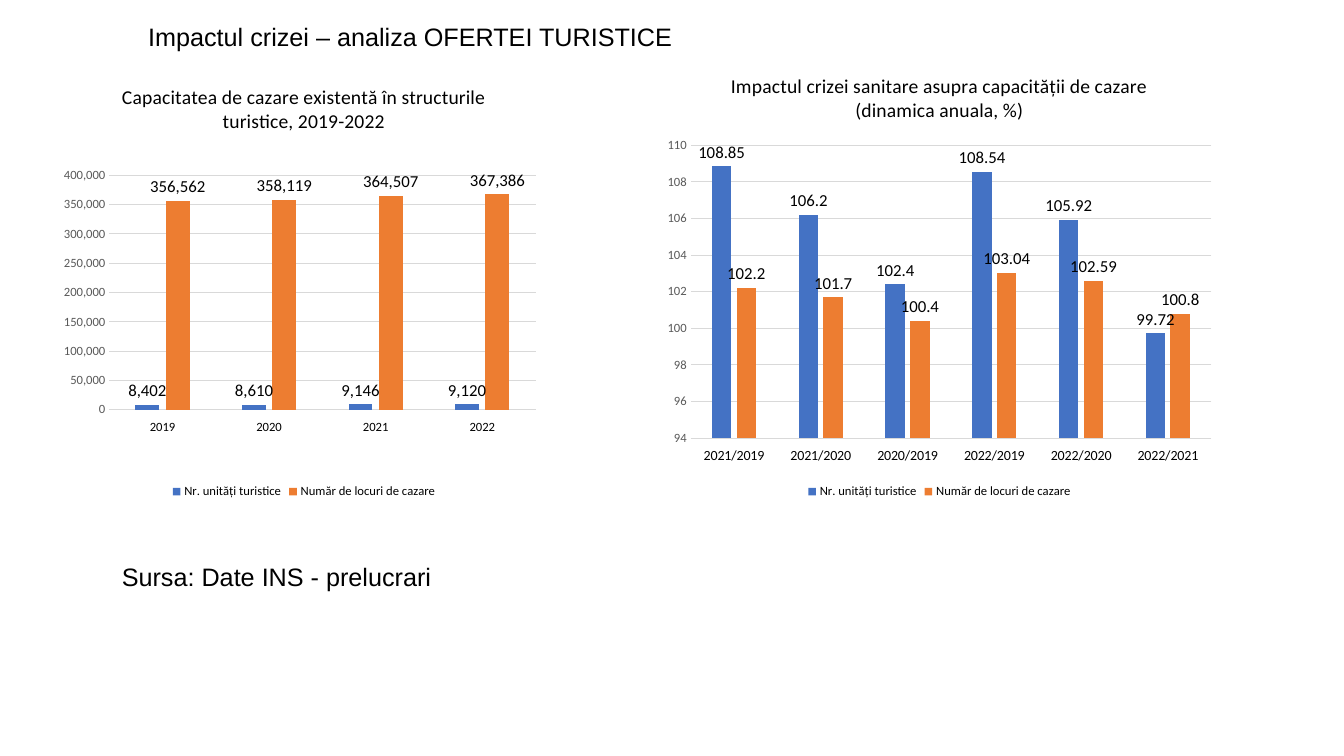
import pptx
import pptx.chart.data
import pptx.dml.color
import pptx.enum.chart
import pptx.enum.text
import pptx.oxml
import pptx.oxml.ns
import pptx.util

Pt = pptx.util.Pt

# Content
TITLE = "Impactul crizei – analiza OFERTEI TURISTICE"
SOURCE = "Sursa: Date INS - prelucrari"
SERIES = [("Nr. unități turistice", "units"), ("Număr de locuri de cazare", "places")]
CHARTS = [
    {
        "title": "Capacitatea de cazare existentă în structurile turistice, 2019-2022",
        "place": (42.5, 46.8, 349.2, 312.5),
        "categories": ["2019", "2020", "2021", "2022"],
        "units": [8402, 8610, 9146, 9120],
        "places": [356562, 358119, 364507, 367386],
        "format": "#,##0",
        "scale": (0, 400000, 50000),
        "category_size": 9,
        "plot": {"x": 0.102, "y": 0.251, "w": 0.872, "h": 0.536},
    },
    {
        "title": "Impactul crizei sanitare asupra capacității de cazare (dinamica anuala, %)",
        "place": (468.7, 38.9, 404.6, 320.4),
        "categories": ["2021/2019", "2021/2020", "2020/2019",
                       "2022/2019", "2022/2020", "2022/2021"],
        "units": [108.85, 106.2, 102.4, 108.54, 105.92, 99.72],
        "places": [102.2, 101.7, 100.4, 103.04, 102.59, 100.8],
        "format": "General",
        "scale": (94, 110, 2),
        "category_size": 10,
        "plot": None,
    },
]
COLORS = {"text": "000000", "axis": "595959", "grid": "D9D9D9",
          "units": "4472C4", "places": "ED7D31"}


def color(name):
    return pptx.dml.color.RGBColor.from_string(COLORS[name])


def style_font(font, size, name="Calibri", tint="text"):
    font.size = Pt(size)
    font.name = name
    font.bold = False
    font.color.rgb = color(tint)


def style_line(line):
    line.color.rgb = color("grid")
    line.width = Pt(0.75)


def write_text(box, text, place, anchor):
    box.left, box.top, box.width, box.height = map(Pt, place)
    frame = box.text_frame
    frame.word_wrap = True
    frame.vertical_anchor = anchor
    frame.margin_left = frame.margin_right = Pt(7.2)
    frame.margin_top = frame.margin_bottom = Pt(3.6)
    para = frame.paragraphs[0]
    para.alignment = pptx.enum.text.PP_ALIGN.LEFT
    para.line_spacing = 1.0
    span = para.add_run()
    span.text = text
    style_font(span.font, 18, "Arial")


def place_plot(chart, plot):
    """Fix the inner plot area as fractions of the chart."""
    area = chart._chartSpace.chart.plotArea
    for old in area.findall(pptx.oxml.ns.qn("c:layout")):
        area.remove(old)
    sizes = "".join(f'<c:{key} val="{value}"/>' for key, value in plot.items())
    area.insert(0, pptx.oxml.parse_xml(
        f'<c:layout {pptx.oxml.ns.nsdecls("c")}><c:manualLayout>'
        '<c:layoutTarget val="inner"/><c:xMode val="edge"/><c:yMode val="edge"/>'
        f'{sizes}</c:manualLayout></c:layout>'))


def add_column_chart(page, content):
    kinds = pptx.enum.chart
    data = pptx.chart.data.CategoryChartData(number_format=content["format"])
    data.categories = content["categories"]
    for name, key in SERIES:
        data.add_series(name, content[key])
    chart = page.shapes.add_chart(kinds.XL_CHART_TYPE.COLUMN_CLUSTERED,
                                  *map(Pt, content["place"]), data).chart
    style_font(chart.font, 10, "Arial")

    # Chart title and legend
    chart.has_title = True
    span = chart.chart_title.text_frame.paragraphs[0].add_run()
    span.text = content["title"]
    style_font(span.font, 14)
    chart.chart_title.include_in_layout = False
    chart.has_legend = True
    chart.legend.position = kinds.XL_LEGEND_POSITION.BOTTOM
    chart.legend.include_in_layout = False
    style_font(chart.legend.font, 9)

    # Axes
    years, values = chart.category_axis, chart.value_axis
    for axis in (years, values):
        axis.major_tick_mark = axis.minor_tick_mark = kinds.XL_TICK_MARK.NONE
    style_line(years.format.line)
    years.tick_label_position = kinds.XL_TICK_LABEL_POSITION.LOW
    style_font(years.tick_labels.font, content["category_size"])
    values.minimum_scale, values.maximum_scale, values.major_unit = content["scale"]
    values.format.line.fill.background()
    values.has_major_gridlines = True
    style_line(values.major_gridlines.format.line)
    values.tick_labels.number_format = content["format"]
    values.tick_labels.number_format_is_linked = False
    style_font(values.tick_labels.font, 9, tint="axis")

    # Columns and their labels
    columns = chart.plots[0]
    columns.vary_by_categories = False
    columns.gap_width = 219
    columns.overlap = -27
    for series, (_, key) in zip(columns.series, SERIES):
        series.invert_if_negative = False
        series.format.fill.solid()
        series.format.fill.fore_color.rgb = color(key)
        labels = series.data_labels
        labels.show_value = True
        labels.position = kinds.XL_LABEL_POSITION.OUTSIDE_END
        labels.number_format = content["format"]
        labels.number_format_is_linked = False
        style_font(labels.font, 12)
    if content["plot"]:
        place_plot(chart, content["plot"])


def main():
    deck = pptx.Presentation()
    deck.slide_width, deck.slide_height = Pt(960), Pt(540)
    page = deck.slides.add_slide(deck.slide_layouts[5])
    anchor = pptx.enum.text.MSO_ANCHOR.TOP

    for content in CHARTS:
        add_column_chart(page, content)

    # Slide title and source line
    write_text(page.shapes.title, TITLE, (98.6, 11.5, 430.6, 27.4), anchor)
    source_place = (79.9, 397.4, 344.2, 28.8)
    source = page.shapes.add_textbox(*map(Pt, source_place))
    write_text(source, SOURCE, source_place, anchor)

    deck.save("out.pptx")


if __name__ == "__main__":
    main()
